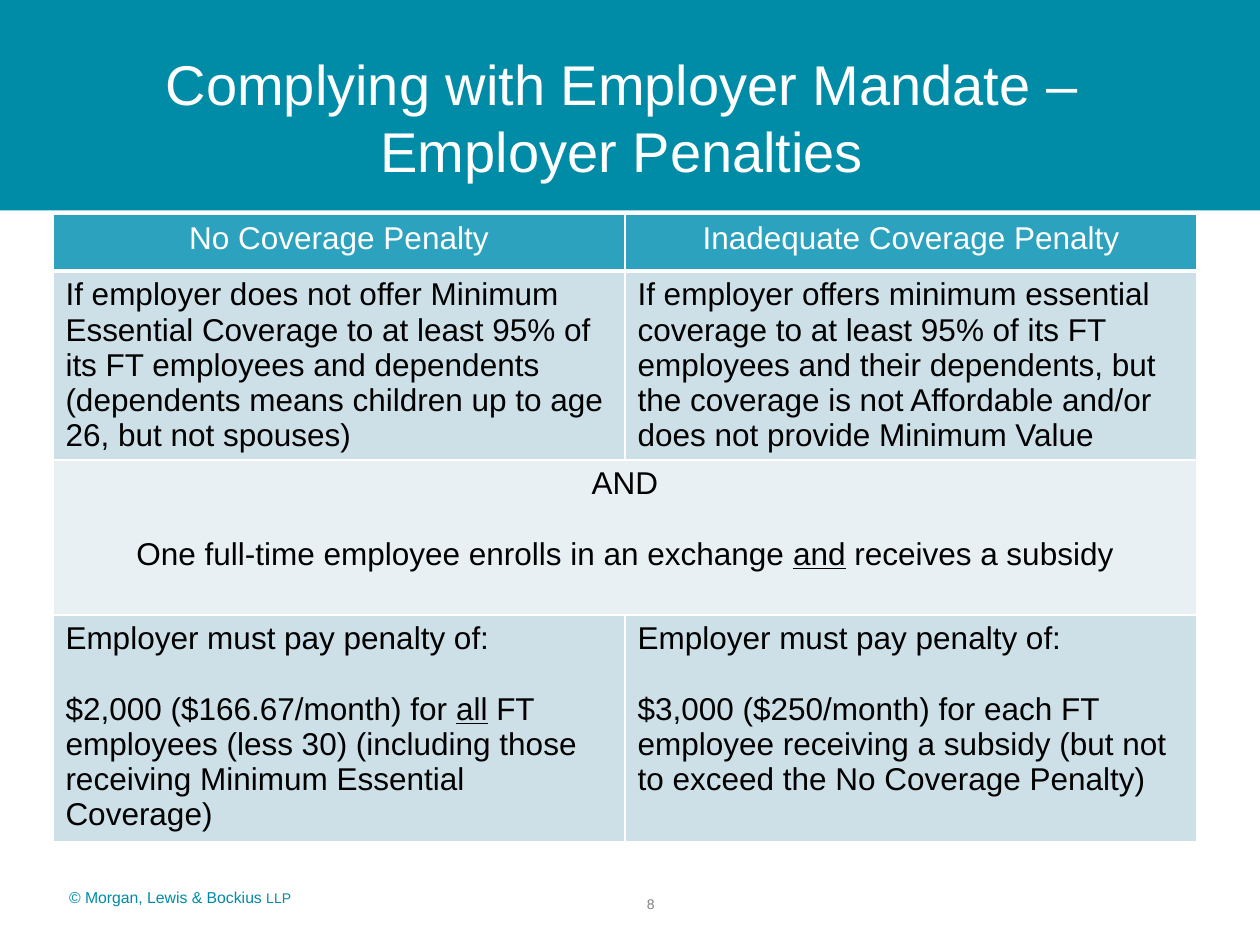
from pptx import Presentation
from pptx import util as u
from pptx.dml.color import RGBColor
from pptx.enum import shapes, text
from pptx.oxml.ns import qn
from lxml import etree

TEAL, HEADER, BAND, PALE = "008BA6", "2DA2BF", "CDE0E8", "E8F0F4"
WHITE, BLACK, GRAY = "FFFFFF", "000000", "808080"
CENTER, LEFT = text.PP_ALIGN.CENTER, text.PP_ALIGN.LEFT

TITLE = "Complying with Employer Mandate – \vEmployer Penalties "
COPYRIGHT = [("© Morgan, Lewis & Bockius ", 9), ("LLP", 8)]
PAGE_NUMBER = "8"

ROWS = [
    (0.45, HEADER, WHITE, CENTER, [["No Coverage Penalty"], ["Inadequate Coverage Penalty"]]),
    (1.5, BAND, BLACK, LEFT, [
        ["If employer does not offer Minimum Essential Coverage to at least 95% of its FT "
         "employees and dependents (dependents means children up to age 26, but not spouses)"],
        ["If employer offers minimum essential coverage to at least 95% of its FT employees and "
         "their dependents, but the coverage is not Affordable and/or does not provide Minimum Value"],
    ]),
    (1.23, PALE, BLACK, CENTER, [
        ["AND", "One full-time employee enrolls in an exchange _and_ receives a subsidy"],
    ]),
    (1.8, BAND, BLACK, LEFT, [
        ["Employer must pay penalty of:",
         "$2,000 ($166.67/month) for _all_ FT employees (less 30) "
         "(including those receiving Minimum Essential Coverage)"],
        ["Employer must pay penalty of:",
         "$3,000 ($250/month) for each FT employee receiving a subsidy "
         "(but not to exceed the No Coverage Penalty)"],
    ]),
]


def box(left, top, width, height):
    return [u.Inches(value) for value in (left, top, width, height)]


def format_font(font, size, color):
    font.name = "Arial"
    font.size = u.Pt(size)
    font.bold = False
    font.color.rgb = RGBColor.from_string(color)


def add_runs(paragraph, pieces, color):
    for content, size, underlined in pieces:
        run = paragraph.add_run()
        run.text = content
        format_font(run.font, size, color)
        if underlined:
            run.font.underline = True


def set_borders(cell, is_header, below_header):
    properties = cell._tc.get_or_add_tcPr()
    thick = {"lnB": is_header, "lnT": below_header}
    for side in ("lnL", "lnR", "lnT", "lnB"):
        width = u.Pt(3 if thick.get(side) else 1)
        line = etree.SubElement(properties, qn("a:" + side), w=str(width))
        fill = etree.SubElement(line, qn("a:solidFill"))
        etree.SubElement(fill, qn("a:srgbClr"), val=WHITE)


def fill_cell(cell, paragraphs, color, alignment):
    frame = cell.text_frame
    for index, content in enumerate(paragraphs):
        paragraph = frame.add_paragraph() if index else frame.paragraphs[0]
        paragraph.alignment = alignment
        if index:
            paragraph.space_before = u.Pt(20)
        pieces = [(part, 18, order % 2 == 1) for order, part in enumerate(content.split("_"))]
        add_runs(paragraph, pieces, color)


def add_penalty_table(slide):
    frame = slide.shapes.add_table(len(ROWS), 2, *box(0.42, 1.7, 9.08, 4.98))
    table = frame.table
    for row_index, (height, fill, color, alignment, cells) in enumerate(ROWS):
        table.rows[row_index].height = u.Inches(height)
        for column in range(2):
            cell = table.cell(row_index, column)
            set_borders(cell, row_index == 0, row_index == 1)
            cell.fill.solid()
            cell.fill.fore_color.rgb = RGBColor.from_string(fill)
        if len(cells) == 1:
            table.cell(row_index, 0).merge(table.cell(row_index, 1))
        for column, paragraphs in enumerate(cells):
            fill_cell(table.cell(row_index, column), paragraphs, color, alignment)


def add_banner(slide):
    banner = slide.shapes.add_shape(shapes.MSO_SHAPE.RECTANGLE, *box(0, 0, 10, 1.67))
    banner.shadow.inherit = False
    banner.fill.solid()
    banner.fill.fore_color.rgb = RGBColor.from_string(TEAL)
    banner.line.fill.background()
    slide.shapes._spTree.insert(2, banner._element)


def add_title(slide):
    title = slide.shapes.title
    title.left, title.top, title.width, title.height = box(0.5, 0.3, 9, 1.25)
    frame = title.text_frame
    frame.text = TITLE
    frame.vertical_anchor = text.MSO_ANCHOR.MIDDLE
    frame.auto_size = text.MSO_AUTO_SIZE.NONE
    paragraph = frame.paragraphs[0]
    paragraph.alignment = CENTER
    for run in paragraph.runs:
        format_font(run.font, 32, WHITE)


def add_footer(slide, place, pieces, color, alignment, wrap):
    frame = slide.shapes.add_textbox(*box(*place)).text_frame
    frame.word_wrap = wrap
    paragraph = frame.paragraphs[0]
    paragraph.alignment = alignment
    add_runs(paragraph, [(content, size, False) for content, size in pieces], color)


def main():
    presentation = Presentation()
    presentation.slide_width, presentation.slide_height = u.Inches(10), u.Inches(7.5)
    slide = presentation.slides.add_slide(presentation.slide_layouts[5])
    add_banner(slide)
    add_title(slide)
    add_penalty_table(slide)
    add_footer(slide, (0.45, 7, 1.97, 0.25), COPYRIGHT, TEAL, LEFT, False)
    add_footer(slide, (4.25, 7.06, 1.83, 0.33), [(PAGE_NUMBER, 8)], GRAY, CENTER, True)
    presentation.save("out.pptx")


if __name__ == "__main__":
    main()
